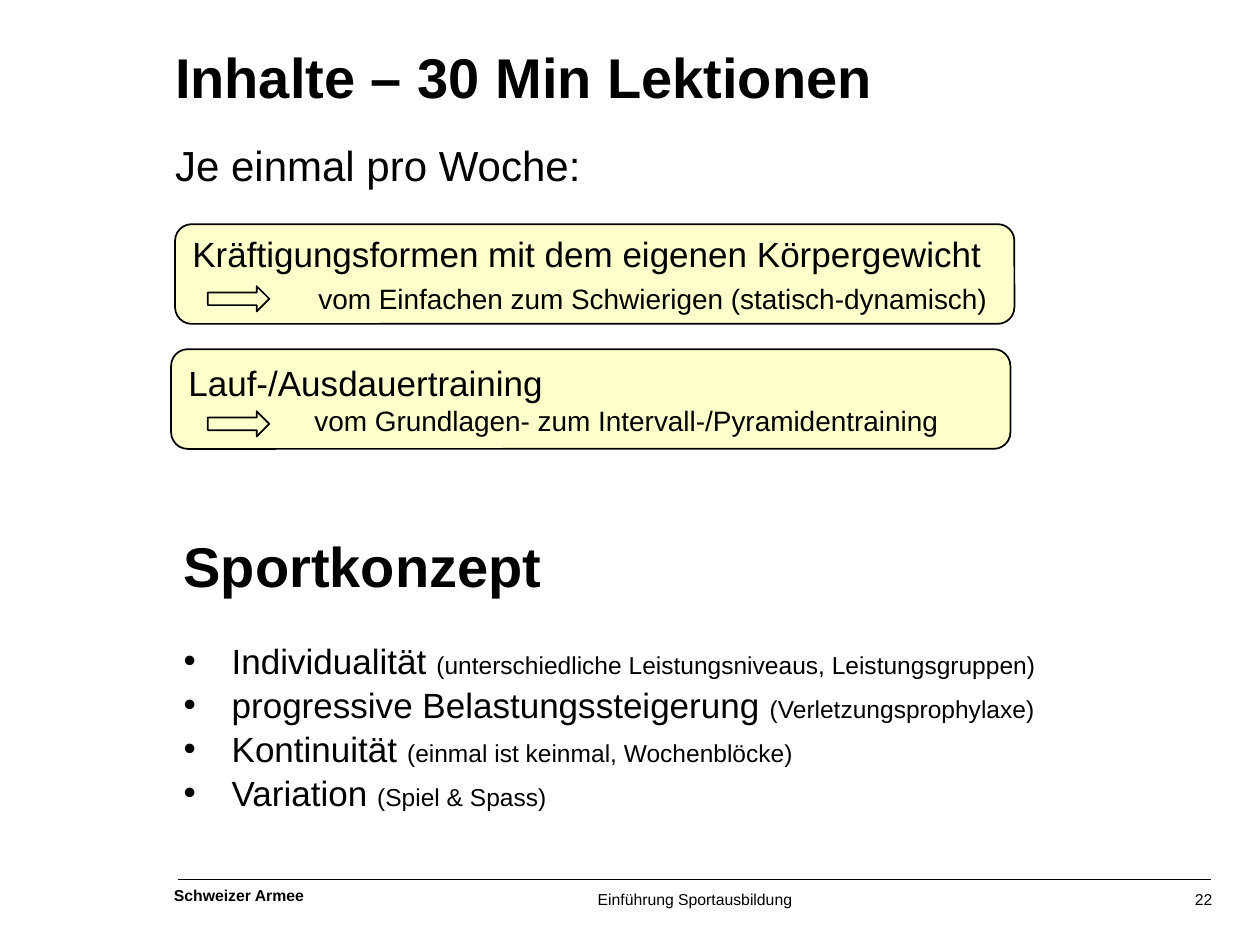
"""Build the slide on 30-minute lessons and the sport concept."""
from pptx import Presentation
from pptx.dml.color import RGBColor
from pptx.enum.shapes import MSO_CONNECTOR, MSO_SHAPE
from pptx.enum.text import MSO_ANCHOR, MSO_AUTO_SIZE, PP_ALIGN
from pptx.oxml.ns import qn
from pptx.util import Cm, Pt
from lxml.etree import SubElement

BLACK = RGBColor(0x00, 0x00, 0x00)
CREAM = RGBColor(0xFF, 0xFF, 0xCC)
LINE_SPACING = 1.05


def add_text(paragraph, text, size, bold=False):
    run = paragraph.add_run()
    run.text = text
    run.font.name = "Arial"
    run.font.size = Pt(size)
    run.font.bold = bold
    run.font.color.rgb = BLACK


def prepare(frame, margin_x=0, margin_y=0, anchor=MSO_ANCHOR.TOP, wrap=True):
    frame.auto_size = MSO_AUTO_SIZE.NONE
    frame.word_wrap = wrap
    frame.vertical_anchor = anchor
    frame.margin_left = frame.margin_right = Cm(margin_x)
    frame.margin_top = frame.margin_bottom = Cm(margin_y)
    paragraph = frame.paragraphs[0]
    paragraph.alignment = PP_ALIGN.LEFT
    return paragraph


prs = Presentation()
prs.slide_width, prs.slide_height = Cm(25.4), Cm(19.05)
slide = prs.slides.add_slide(prs.slide_layouts[1])
shapes = slide.shapes

page_number = shapes.add_textbox(Cm(23.8), Cm(17.93), Cm(0.64), Cm(0.38))
number_line = prepare(page_number.text_frame, wrap=False)
number_line.alignment = PP_ALIGN.RIGHT
add_text(number_line, "22", 9)

for text, left, width, height, bold in (
    ("Schweizer Armee", 3.43, 2.82, 0.53, True),
    ("Einführung Sportausbildung", 11.89, 4.27, 1.09, False),
):
    footer = shapes.add_shape(MSO_SHAPE.OCTAGON, Cm(left), Cm(17.78), Cm(width), Cm(height))
    footer.shadow.inherit = False
    footer.fill.background()
    footer.line.fill.background()
    add_text(prepare(footer.text_frame, wrap=False), text, 9, bold)

footer_rule = shapes.add_connector(MSO_CONNECTOR.STRAIGHT, Cm(24.41), Cm(17.73), Cm(3.58), Cm(17.73))
footer_rule.line.color.rgb = BLACK
footer_rule.line.width = Pt(0.75)
SubElement(footer_rule._element.spPr, qn("a:effectLst"))

title = shapes.title
title.left, title.top, title.width, title.height = Cm(3.53), Cm(0.79), Cm(20.73), Cm(2.74)
title_line = prepare(title.text_frame)
title_line.line_spacing = LINE_SPACING
add_text(title_line, "Inhalte – 30 Min Lektionen", 32, True)

frequency = shapes.add_textbox(Cm(3.53), Cm(2.77), Cm(21.41), Cm(1.02))
frequency_line = prepare(frequency.text_frame)
frequency_line.line_spacing = LINE_SPACING
add_text(frequency_line, "Je einmal pro Woche:", 24)

for topic, progression, tab_size, left, top in (
    ("Kräftigungsformen mit dem eigenen Körpergewicht",
     "vom Einfachen zum Schwierigen (statisch-dynamisch)", 20, 3.53, 4.52),
    ("Lauf-/Ausdauertraining",
     "vom Grundlagen- zum Intervall-/Pyramidentraining", 16, 3.45, 7.04),
):
    lesson = shapes.add_shape(MSO_SHAPE.ROUNDED_RECTANGLE, Cm(left), Cm(top), Cm(16.92), Cm(2.01))
    arrow = shapes.add_shape(MSO_SHAPE.RIGHT_ARROW, Cm(4.19), Cm(top + 1.25), Cm(1.24), Cm(0.51))
    for part in (lesson, arrow):
        part.shadow.inherit = False
        part.fill.solid()
        part.fill.fore_color.rgb = CREAM
        part.line.color.rgb = BLACK
        part.line.width = Pt(1)
    add_text(prepare(lesson.text_frame, 0.25, 0.13, MSO_ANCHOR.MIDDLE), topic, 20)
    detail = lesson.text_frame.add_paragraph()
    tabs = SubElement(detail._p.get_or_add_pPr(), qn("a:tabLst"))
    SubElement(tabs, qn("a:tab"), pos=str(Cm(2.54)), algn="l")
    detail.alignment = PP_ALIGN.LEFT
    add_text(detail, "\t", tab_size)
    add_text(detail, progression, 16)

concept = slide.placeholders[1]
concept.left, concept.top, concept.width, concept.height = Cm(3.45), Cm(10.52), Cm(18.19), Cm(5.82)
concept_line = prepare(concept.text_frame, 0.25, 0.13)
concept_line.line_spacing = LINE_SPACING
concept_line.space_before = Pt(0)
heading_format = concept_line._p.get_or_add_pPr()
heading_format.set("marL", "0")
heading_format.set("indent", "0")
SubElement(heading_format, qn("a:buNone"))
add_text(concept_line, "Sportkonzept", 32, True)

for index, (principle, note) in enumerate((
    ("Individualität ", "(unterschiedliche Leistungsniveaus, Leistungsgruppen)"),
    ("progressive Belastungssteigerung ", "(Verletzungsprophylaxe)"),
    ("Kontinuität ", "(einmal ist keinmal, Wochenblöcke)"),
    ("Variation ", "(Spiel & Spass)"),
)):
    item = concept.text_frame.add_paragraph()
    item_format = item._p.get_or_add_pPr()
    item_format.set("marL", str(Cm(0.97)))
    item_format.set("indent", str(-Cm(0.97)))
    SubElement(item_format, qn("a:buChar"), char="•")
    item.alignment = PP_ALIGN.LEFT
    item.line_spacing = LINE_SPACING
    item.space_before = Pt(0 if index else 22)
    add_text(item, principle, 20)
    add_text(item, note, 14)

prs.save("out.pptx")
